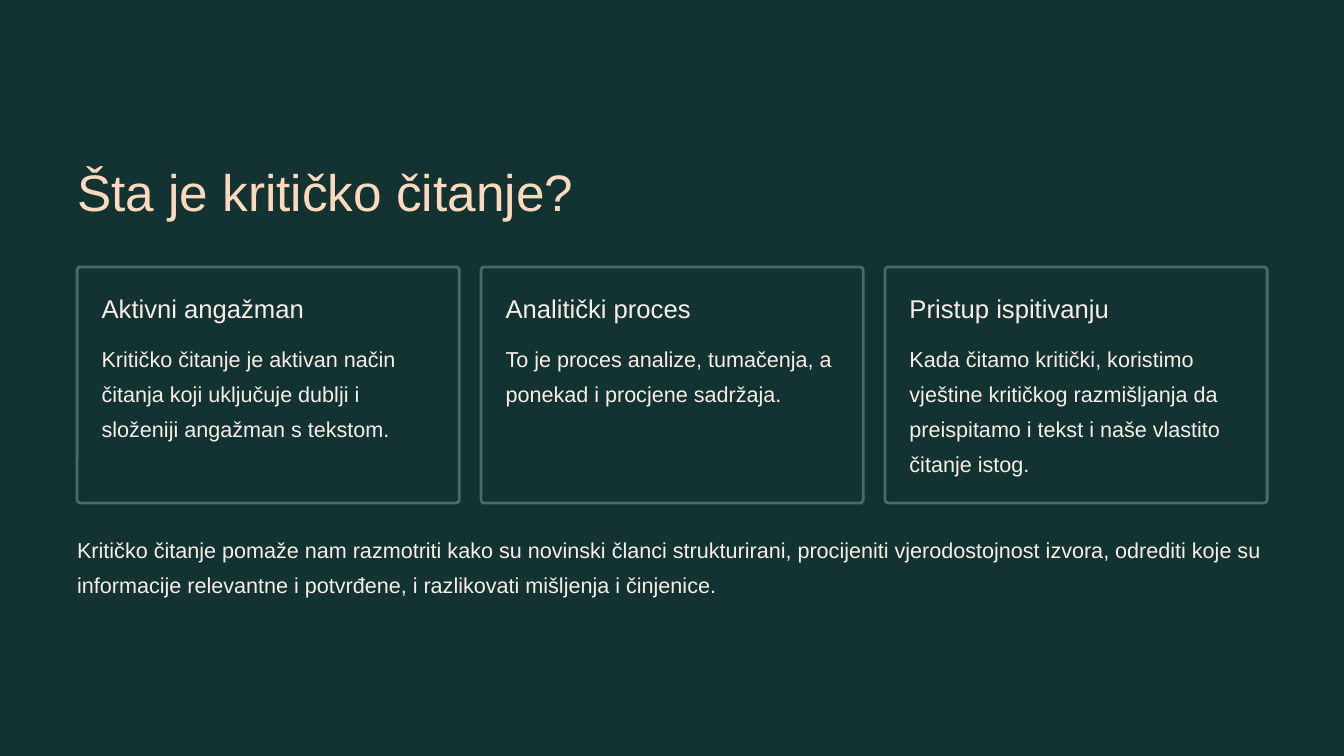
from pptx import Presentation
from pptx.dml.color import RGBColor
from pptx.enum.shapes import MSO_SHAPE
from pptx.util import Pt

BACKGROUND = "123332"
BORDER = "4A6B6A"
PEACH = "FFD9BE"
CREAM = "F9EEE7"

CARDS = [
    ("Aktivni angažman",
     "Kritičko čitanje je aktivan način čitanja koji uključuje dublji i složeniji angažman s tekstom."),
    ("Analitički proces",
     "To je proces analize, tumačenja, a ponekad i procjene sadržaja."),
    ("Pristup ispitivanju",
     "Kada čitamo kritički, koristimo vještine kritičkog razmišljanja da preispitamo i tekst "
     "i naše vlastito čitanje istog."),
]
SUMMARY = (
    "Kritičko čitanje pomaže nam razmotriti kako su novinski članci strukturirani, "
    "procijeniti vjerodostojnost izvora, odrediti koje su informacije relevantne i potvrđene, "
    "i razlikovati mišljenja i činjenice."
)


def color(value):
    """Turn a hex string into a colour."""
    return RGBColor.from_string(value)


def add_text(page, text, left, top, width, height, size=18.5, spacing=30, fill=CREAM):
    """Place a text box without margins."""
    box = page.shapes.add_textbox(Pt(left), Pt(top), Pt(width), Pt(height))
    frame = box.text_frame
    frame.word_wrap = True
    frame.margin_left = frame.margin_right = frame.margin_top = frame.margin_bottom = 0
    para = frame.paragraphs[0]
    para.line_spacing = Pt(spacing)
    span = para.add_run()
    span.text = text
    span.font.name = "Arial"
    span.font.size = Pt(size)
    span.font.color.rgb = color(fill)


def add_card(page, heading, body, left, top, width, height):
    """Draw an outlined card with a heading and body text."""
    card = page.shapes.add_shape(
        MSO_SHAPE.ROUNDED_RECTANGLE, Pt(left), Pt(top), Pt(width), Pt(height))
    card.adjustments[0] = 0.014
    card.shadow.inherit = False
    card.fill.solid()
    card.fill.fore_color.rgb = color(BACKGROUND)
    card.line.color.rgb = color(BORDER)
    card.line.width = Pt(2.4)
    inset = 21
    inner = width - 2 * inset
    add_text(page, heading, left + inset, top + inset, inner, 27.5, size=22, spacing=27.5)
    add_text(page, body, left + inset, top + 59.75, inner, 121)


def add_card_row(page, left, top, width, height, gap=18.7):
    """Spread the cards evenly across the row."""
    card_width = (width - gap * (len(CARDS) - 1)) / len(CARDS)
    for index, (heading, body) in enumerate(CARDS):
        add_card(page, heading, body, left + index * (card_width + gap), top, card_width, height)


def build_slide(deck):
    """Compose the slide on critical reading."""
    page = deck.slides.add_slide(deck.slide_layouts[6])
    page.background.fill.solid()
    page.background.fill.fore_color.rgb = color(BACKGROUND)
    left, width = 66.1, 1020
    add_text(page, "Šta je kritičko čitanje?", left, 135.4, width, 55.4,
             size=44, spacing=55, fill=PEACH)
    add_card_row(page, left, 228.8, width, 202.3)
    add_text(page, SUMMARY, left, 452.2, width, 60.5)


def main():
    """Build and save the deck."""
    deck = Presentation()
    deck.slide_width = Pt(1152)
    deck.slide_height = Pt(648)
    build_slide(deck)
    deck.save("out.pptx")


if __name__ == "__main__":
    main()
